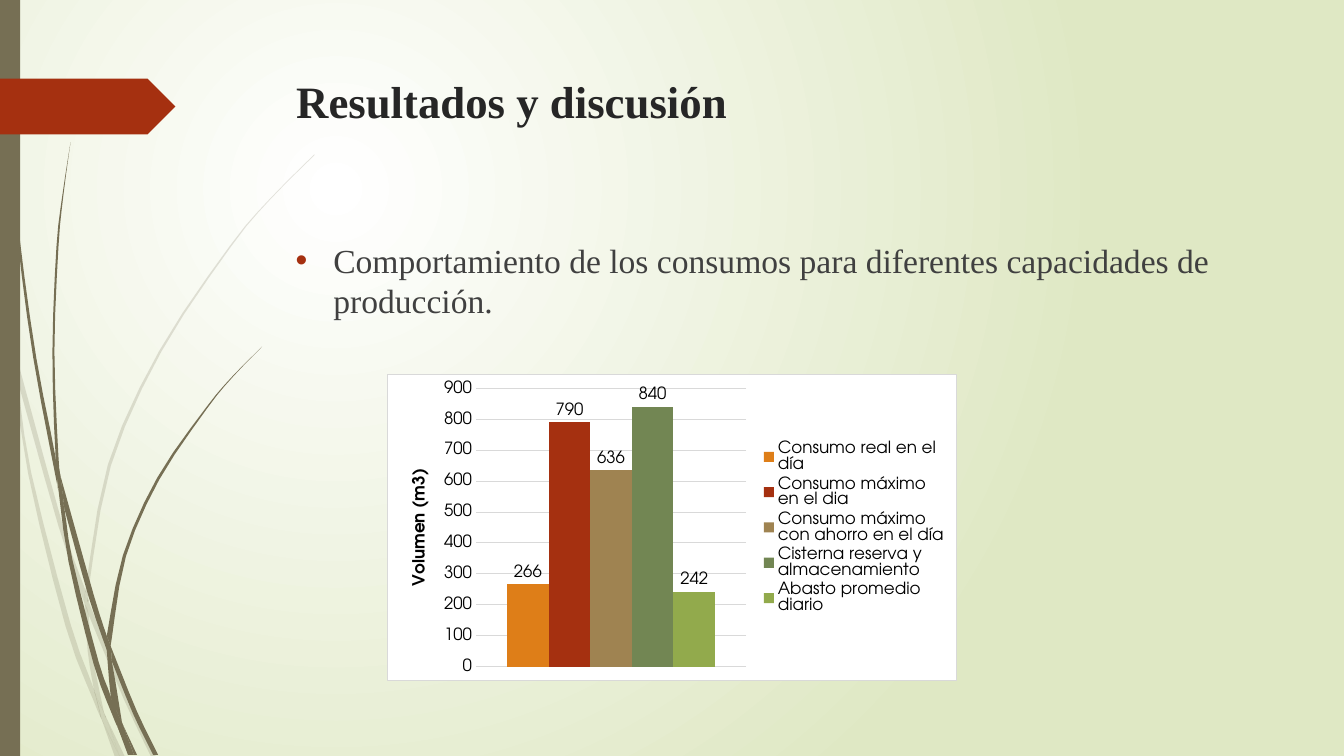
from lxml import etree
from pptx import Presentation, oxml
from pptx.chart.data import CategoryChartData
from pptx.dml.color import RGBColor
from pptx.enum import chart as ch, shapes, text
from pptx.oxml import ns
from pptx.util import Cm, Pt

OLIVE = RGBColor(0x76, 0x6F, 0x54)
RED = RGBColor(0xA5, 0x30, 0x10)
WHITE = RGBColor(0xFF, 0xFF, 0xFF)
PALE_GREEN = RGBColor(0xDF, 0xE8, 0xC4)
TITLE_GREY = RGBColor(0x26, 0x26, 0x26)
BODY_GREY = RGBColor(0x40, 0x40, 0x40)
GRID_GREY = RGBColor(0xD9, 0xD9, 0xD9)
BLACK = RGBColor(0, 0, 0)
GRASS_UNIT = Cm(2.54) / 100
SERIF = "Times New Roman"

# Each piece of grass: its two edges from tip to root, in grass units
FAINT_GRASS = [
    ([(0, 299), (10, 344), (11, 350)], [(0, 282), (9, 322), (11, 350)]),
    ([(17, 376), (58, 522), (84, 599)], [(14, 345), (62, 520), (85, 586)]),
    ([(88, 610), (123, 694), (150, 751)], [(88, 596), (92, 607), (127, 692), (155, 751)]),
    ([(105, 711), (119, 751)], [(105, 711), (124, 751)]),
    ([(11, 350), (28, 470), (65, 621), (92, 693), (101, 714)],
     [(11, 350), (17, 376), (31, 469), (70, 619), (93, 683), (101, 714)]),
    ([(84, 599), (87, 646), (93, 683), (96, 692), (105, 711)],
     [(84, 599), (88, 610), (91, 646), (103, 706), (105, 711)]),
    ([(312, 153), (268, 197), (228, 244), (158, 348), (107, 461), (85, 584), (85, 586)],
     [(312, 154), (268, 198), (229, 245), (160, 349), (110, 462), (88, 584), (88, 596)]),
    ([(101, 714), (114, 751)], [(101, 714), (119, 751)]),
    ([(85, 586), (84, 599)], [(88, 596), (88, 610)]),
    ([(93, 683), (99, 707), (101, 714), (119, 751)], [(93, 683), (96, 692), (105, 711), (119, 751)]),
]
DARK_GRASS = [
    ([(3, 0), (7, 110), (17, 233), (33, 355), (56, 477), (57, 481)],
     [(4, 0), (8, 109), (19, 232), (36, 355), (55, 453), (57, 481)]),
    ([(64, 505), (88, 592), (106, 645)], [(60, 472), (93, 590), (106, 631)]),
    ([(111, 656), (132, 708), (152, 749)], [(110, 641), (113, 649), (136, 706), (157, 749)]),
    ([(57, 477), (68, 557), (93, 659), (111, 708), (117, 722)],
     [(57, 477), (64, 505), (72, 556), (98, 657), (110, 691), (117, 722)]),
    ([(70, 141), (62, 193), (56, 245), (52, 349), (55, 449), (60, 472)],
     [(70, 141), (63, 193), (58, 245), (54, 349), (58, 453), (60, 472)]),
    ([(122, 719), (133, 749)], [(122, 719), (136, 749)]),
    ([(55, 449), (57, 477), (64, 505)], [(55, 449), (60, 472), (64, 505)]),
    ([(260, 344), (231, 373), (204, 405), (156, 474), (122, 551), (106, 631)],
     [(260, 344), (231, 374), (205, 406), (158, 476), (125, 552), (111, 633), (110, 641)]),
    ([(117, 722), (127, 749)], [(117, 722), (131, 749)]),
    ([(106, 645), (110, 691), (116, 706), (122, 719)], [(106, 645), (111, 656), (121, 716), (122, 719)]),
    ([(106, 631), (106, 645)], [(110, 641), (111, 656)]),
    ([(110, 691), (117, 722), (130, 749)], [(110, 691), (116, 706), (122, 719), (133, 749)]),
]


def smooth(points):
    """Return points on a Catmull-Rom curve through the given points, in EMU."""
    padded = [points[0], *points, points[-1]]
    steps = 3 if len(points) > 2 else 1
    curve = []
    for a, b, c, d in zip(padded, padded[1:], padded[2:], padded[3:]):
        for step in range(steps):
            t = step / steps
            curve.append(tuple(
                GRASS_UNIT * (q + t * (r - p) / 2 + t**2 * (2*p - 5*q + 4*r - s) / 2
                              + t**3 * (3*q - p - 3*r + s) / 2)
                for p, q, r, s in zip(a, b, c, d)))
    return curve + [tuple(GRASS_UNIT * value for value in points[-1])]


def manual_layout(x, y, w, h, inner=False):
    target = '<c:layoutTarget val="inner"/>' if inner else ""
    return oxml.parse_xml(
        f'<c:layout {ns.nsdecls("c")}><c:manualLayout>{target}'
        '<c:xMode val="edge"/><c:yMode val="edge"/>'
        f'<c:x val="{x}"/><c:y val="{y}"/><c:w val="{w}"/><c:h val="{h}"/>'
        '</c:manualLayout></c:layout>')


presentation = Presentation()
presentation.slide_width = Cm(33.87)
presentation.slide_height = Cm(19.05)
slide = presentation.slides.add_slide(presentation.slide_layouts[5])

# Background
background = slide.background.fill
background.gradient()
for stop, color in zip(background.gradient_stops, (WHITE, PALE_GREEN)):
    stop.color.rgb = color
gradient = slide.element.find(".//" + ns.qn("a:gradFill"))
gradient.remove(gradient.find(ns.qn("a:lin")))
gradient.append(oxml.parse_xml(
    f'<a:path {ns.nsdecls("a")} path="circle">'
    '<a:fillToRect l="50000" t="50000" r="100000" b="100000"/></a:path>'))

# Grass
for pieces, opacity in ((FAINT_GRASS, 20), (DARK_GRASS, 100)):
    for left_edge, right_edge in pieces:
        outline = smooth(left_edge) + smooth(right_edge)[::-1]
        builder = slide.shapes.build_freeform(*outline[0])
        builder.add_line_segments(outline[1:], close=True)
        blade = builder.convert_to_shape()
        blade.shadow.inherit = False
        blade.fill.solid()
        blade.fill.fore_color.rgb = OLIVE
        blade.line.fill.background()
        if opacity < 100:
            color = blade.element.spPr.find(".//" + ns.qn("a:srgbClr"))
            etree.SubElement(color, ns.qn("a:alpha"), val=str(opacity * 1000))

# Side bar and arrow tab
for preset, top, width, height, color in (
        (shapes.MSO_SHAPE.RECTANGLE, 0, 0.51, 19.05, OLIVE),
        (shapes.MSO_SHAPE.PENTAGON, 1.98, 4.42, 1.41, RED)):
    shape = slide.shapes.add_shape(preset, 0, Cm(top), Cm(width), Cm(height))
    shape.shadow.inherit = False
    shape.fill.solid()
    shape.fill.fore_color.rgb = color
    shape.line.fill.background()

# Title
title = slide.shapes.title
title.left, title.top, title.width, title.height = Cm(7.21), Cm(1.73), Cm(24.77), Cm(3.56)
title.text_frame.text = "Resultados y discusión"
title.text_frame.vertical_anchor = text.MSO_ANCHOR.TOP
title.text_frame.auto_size = text.MSO_AUTO_SIZE.NONE
paragraph = title.text_frame.paragraphs[0]
paragraph.alignment = text.PP_ALIGN.LEFT
paragraph.font.name = SERIF
paragraph.font.size = Pt(32)
paragraph.font.bold = True
paragraph.font.color.rgb = TITLE_GREY

# Bullet
body = slide.shapes.add_textbox(Cm(7.2), Cm(5.92), Cm(24.77), Cm(10.49))
body.text_frame.word_wrap = True
paragraph = body.text_frame.paragraphs[0]
paragraph.text = "Comportamiento de los consumos para diferentes capacidades de producción."
paragraph.space_before = Pt(10)
paragraph.font.name = SERIF
paragraph.font.size = Pt(24)
paragraph.font.color.rgb = BODY_GREY
properties = paragraph._p.get_or_add_pPr()
properties.set("marL", str(Cm(0.95)))
properties.set("indent", str(-Cm(0.95)))
bullet_color = etree.SubElement(properties, ns.qn("a:buClr"))
etree.SubElement(bullet_color, ns.qn("a:srgbClr"), val=str(RED))
etree.SubElement(properties, ns.qn("a:buFont"), typeface="Arial")
etree.SubElement(properties, ns.qn("a:buChar"), char="•")

# Chart
SERIES = [
    ("Consumo real en el día", 266, RGBColor(0xDE, 0x7E, 0x18)),
    ("Consumo máximo en el dia", 790, RED),
    ("Consumo máximo con ahorro en el día", 636, RGBColor(0x9F, 0x83, 0x51)),
    ("Cisterna reserva y almacenamiento", 840, RGBColor(0x72, 0x86, 0x53)),
    ("Abasto promedio diario", 242, RGBColor(0x92, 0xAA, 0x4C)),
]
data = CategoryChartData(number_format="0")
data.categories = ["1"]
for name, volume, _ in SERIES:
    data.add_series(name, [volume])
chart = slide.shapes.add_chart(ch.XL_CHART_TYPE.COLUMN_CLUSTERED,
                               Cm(9.76), Cm(9.43), Cm(14.36), Cm(7.73), data).chart
chart.has_title = False
chart.font.name = "TeX Gyre Adventor"
chart.font.size = Pt(12)
chart.font.color.rgb = BLACK

plot = chart.plots[0]
plot.vary_by_categories = False
plot.gap_width = 150
plot.overlap = 0
for series, (_, _, color) in zip(plot.series, SERIES):
    series.format.fill.solid()
    series.format.fill.fore_color.rgb = color
    series.data_labels.show_value = True
    series.data_labels.position = ch.XL_LABEL_POSITION.OUTSIDE_END

chart.category_axis.visible = False
volume_axis = chart.value_axis
volume_axis.minimum_scale, volume_axis.maximum_scale, volume_axis.major_unit = 0, 900, 100
volume_axis.major_tick_mark = ch.XL_TICK_MARK.NONE
volume_axis.format.line.fill.background()
volume_axis.major_gridlines.format.line.color.rgb = GRID_GREY
volume_axis.major_gridlines.format.line.width = Pt(0.75)
volume_axis.axis_title.text_frame.text = "Volumen (m3)"
axis_font = volume_axis.axis_title.text_frame.paragraphs[0].font
axis_font.bold = True
axis_font.size = Pt(12)

chart.has_legend = True
chart.legend.position = ch.XL_LEGEND_POSITION.RIGHT
chart.legend.include_in_layout = False

chart_space = chart.element
plot_area = chart_space.find(".//" + ns.qn("c:plotArea"))
legend = chart_space.find(".//" + ns.qn("c:legend"))
for parent, index, layout in (
        (plot_area, 0, manual_layout(0.155, 0.045, 0.475, 0.91, inner=True)),
        (legend, 1, manual_layout(0.657, 0.205, 0.325, 0.59))):
    for automatic in parent.findall(ns.qn("c:layout")):
        parent.remove(automatic)
    parent.insert(index, layout)
chart_space.find(ns.qn("c:chart")).addnext(oxml.parse_xml(
    f'<c:spPr {ns.nsdecls("c", "a")}><a:solidFill><a:srgbClr val="{WHITE}"/></a:solidFill>'
    f'<a:ln w="{Pt(0.75)}"><a:solidFill><a:srgbClr val="{GRID_GREY}"/></a:solidFill></a:ln></c:spPr>'))

presentation.save("out.pptx")
